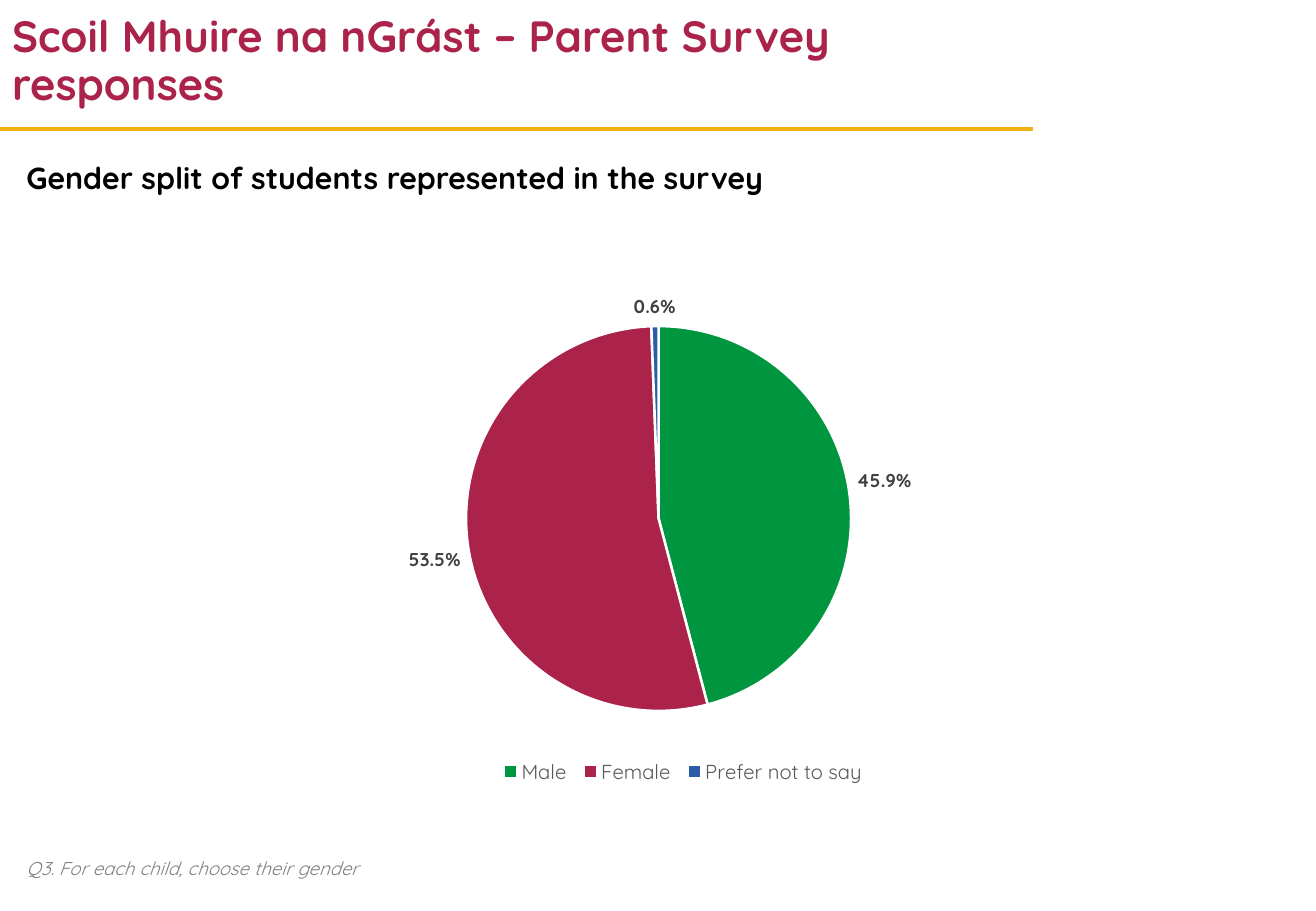
from lxml import etree
from pptx import Presentation
from pptx import util as u
from pptx.chart.data import CategoryChartData
from pptx.dml.color import RGBColor
from pptx.enum import chart as charts, shapes, text
from pptx.oxml import ns

FONT = "Quicksand"
CRIMSON, GOLD, GREEN, BLUE = "AB224A", "F2B114", "009640", "2C5CA8"
BLACK, WHITE, GREY = "000000", "FFFFFF", "808080"
LABEL_GREY, LEGEND_GREY = "404040", "595959"


def color(hex_value):
    return RGBColor.from_string(hex_value)


def style_font(font, size, hex_value, bold=False, italic=False):
    font.name, font.size = FONT, u.Pt(size)
    font.bold, font.italic = bold, italic
    font.color.rgb = color(hex_value)


def manual_layout(x, y, width, height, target=None):
    """Return a chart layout element, given as shares of the chart's size."""
    layout = etree.Element(ns.qn("c:layout"))
    manual = etree.SubElement(layout, ns.qn("c:manualLayout"))
    settings = [("layoutTarget", target)] if target else []
    settings += [("xMode", "edge"), ("yMode", "edge"),
                 ("x", x), ("y", y), ("w", width), ("h", height)]
    for name, value in settings:
        etree.SubElement(manual, ns.qn(f"c:{name}")).set("val", str(value))
    return layout


class SurveySlide:
    """One slide, measured on a grid of 100 columns by 100 rows."""

    def __init__(self, presentation):
        self.column = presentation.slide_width / 100
        self.row = presentation.slide_height / 100
        self.slide = presentation.slides.add_slide(presentation.slide_layouts[5])

    def box(self, left, top, width, height):
        return (u.Emu(round(left * self.column)), u.Emu(round(top * self.row)),
                u.Emu(round(width * self.column)), u.Emu(round(height * self.row)))

    def fill_text(self, shape, words, size, hex_value, **style):
        frame = shape.text_frame
        frame.text = words
        frame.word_wrap = True
        frame.auto_size = text.MSO_AUTO_SIZE.NONE
        frame.vertical_anchor = text.MSO_ANCHOR.MIDDLE
        paragraph = frame.paragraphs[0]
        paragraph.alignment = text.PP_ALIGN.LEFT
        style_font(paragraph.runs[0].font, size, hex_value, **style)
        return paragraph

    def title(self, words, *place):
        shape = self.slide.shapes.title
        shape.left, shape.top, shape.width, shape.height = self.box(*place)
        paragraph = self.fill_text(shape, words, 25.9, CRIMSON, bold=True)
        paragraph.line_spacing = 0.9

    def text_box(self, words, size, hex_value, *place, **style):
        shape = self.slide.shapes.add_textbox(*self.box(*place))
        self.fill_text(shape, words, size, hex_value, **style)

    def rule(self, top, width):
        left, y, right, _ = self.box(0, top, width, 0)
        line = self.slide.shapes.add_connector(
            shapes.MSO_CONNECTOR.STRAIGHT, left, y, right, y)
        line.line.color.rgb = color(GOLD)
        line.line.width = u.Pt(2.25)
        etree.SubElement(line.element.spPr, ns.qn("a:effectLst"))

    def pie(self, slices, *place):
        data = CategoryChartData(number_format="0.0%")
        data.categories = [name for name, _, _ in slices]
        data.add_series("Series 1", [share for _, share, _ in slices])
        chart = self.slide.shapes.add_chart(
            charts.XL_CHART_TYPE.PIE, *self.box(*place), data).chart
        chart.has_title = False
        style_font(chart.font, 10, BLACK)

        plot = chart.plots[0]
        plot.vary_by_categories = True
        for index, (_, _, hex_value) in enumerate(slices):
            point = plot.series[0].points[index].format
            point.fill.solid()
            point.fill.fore_color.rgb = color(hex_value)
            point.line.color.rgb = color(WHITE)
            point.line.width = u.Pt(1.5)

        labels = plot.series[0].data_labels
        labels.show_value = True
        labels.number_format, labels.number_format_is_linked = "0.0%", False
        labels.position = charts.XL_LABEL_POSITION.OUTSIDE_END
        style_font(labels.font, 11, LABEL_GREY, bold=True)

        chart.has_legend = True
        legend = chart.legend
        legend.position = charts.XL_LEGEND_POSITION.BOTTOM
        legend.include_in_layout = False
        style_font(legend.font, 12, LEGEND_GREY)

        plot_area = chart.element.find(".//" + ns.qn("c:plotArea"))
        legend_area = chart.element.find(".//" + ns.qn("c:legend"))
        for area in (plot_area, legend_area):
            for layout in area.findall(ns.qn("c:layout")):
                area.remove(layout)
        plot_area.insert(0, manual_layout(0.12, 0.09, 0.7, 0.76, "inner"))
        legend_area.find(ns.qn("c:legendPos")).addnext(
            manual_layout(0.17, 0.87, 0.69, 0.07))


def main():
    presentation = Presentation()
    presentation.slide_width = u.Inches(10.83)
    presentation.slide_height = u.Inches(7.5)

    survey = SurveySlide(presentation)
    survey.rule(14.13, 78.5)
    survey.title("Scoil Mhuire na nGrást – Parent Survey responses", 0, 1.6, 80.8, 10.5)
    survey.text_box("Gender split of students represented in the survey", 18, BLACK,
                    1.1, 16.8, 75, 5.3, bold=True)
    survey.text_box("Q3. For each child, choose their gender", 11, GREY,
                    1.1, 93.3, 82, 3.9, italic=True)
    survey.pie([("Male", 0.459, GREEN),
                ("Female", 0.535, CRIMSON),
                ("Prefer not to say", 0.006, BLUE)], 30.4, 26.9, 41.8, 63.9)
    presentation.save("out.pptx")


if __name__ == "__main__":
    main()
